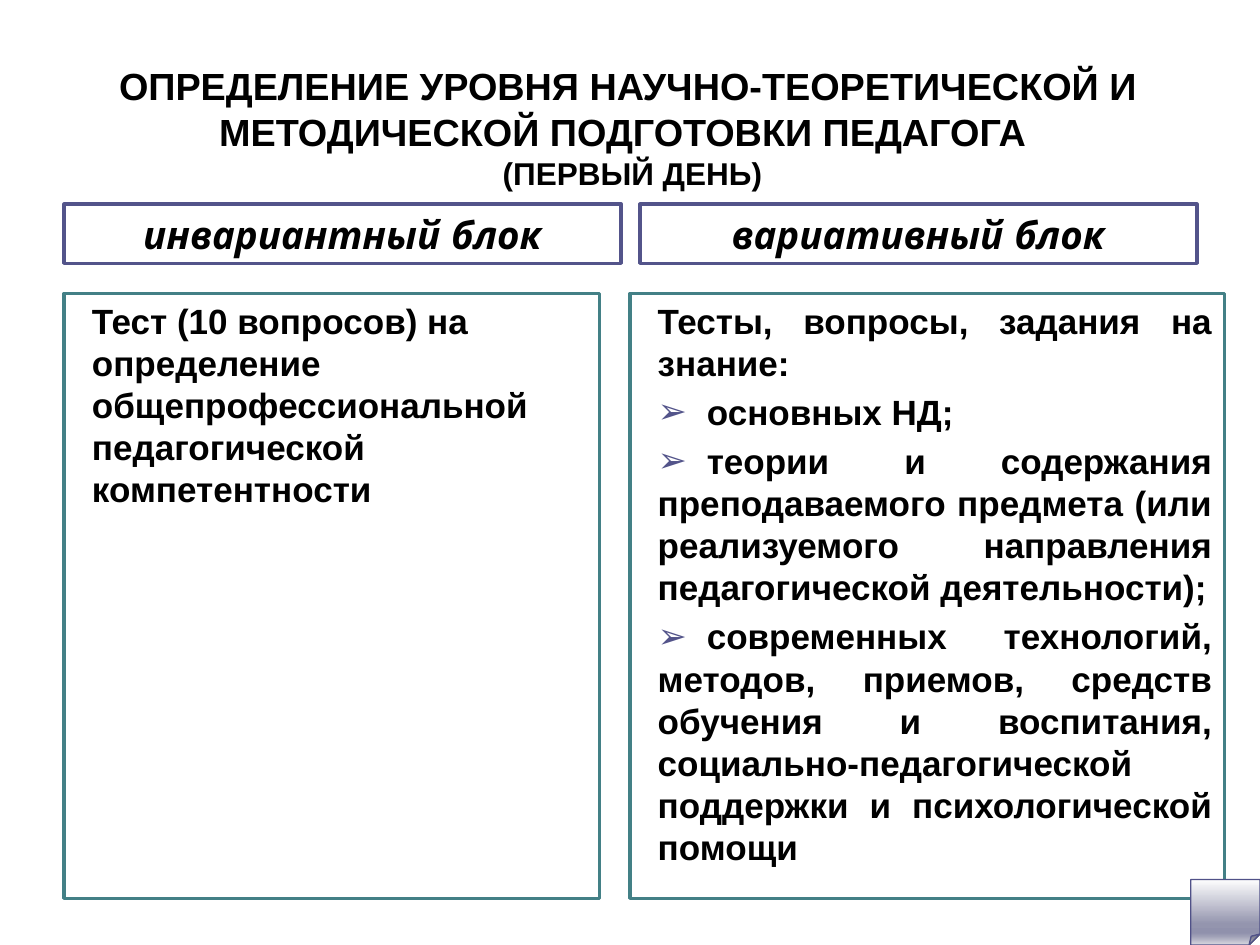
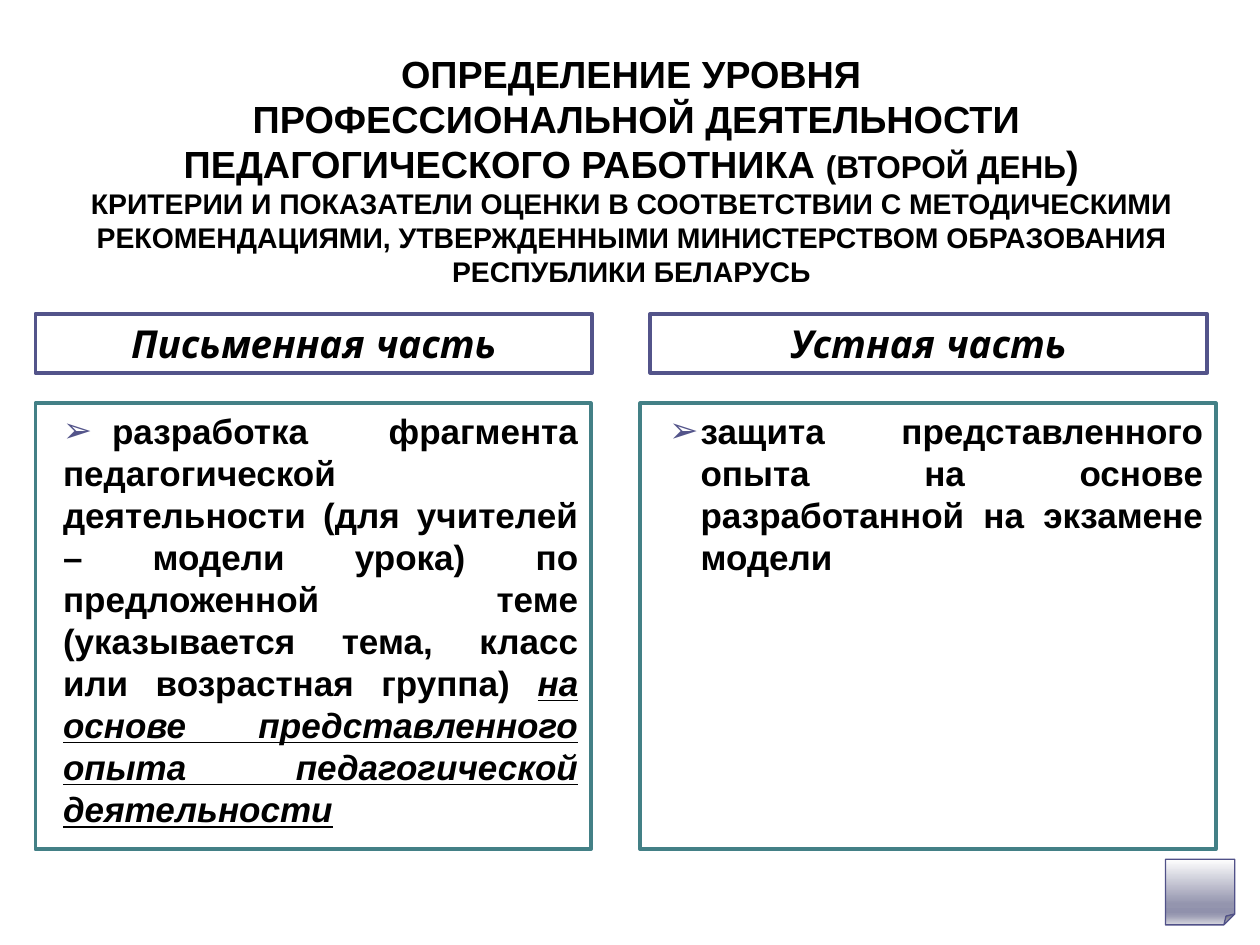
import pptx
import pptx.dml.color
import pptx.enum.shapes
import pptx.enum.text
import pptx.oxml
import pptx.oxml.ns
import pptx.util

RGBColor = pptx.dml.color.RGBColor
Align = pptx.enum.text.PP_ALIGN
Anchor = pptx.enum.text.MSO_ANCHOR

BLACK = RGBColor(0x00, 0x00, 0x00)
WHITE = RGBColor(0xFF, 0xFF, 0xFF)
INDIGO = RGBColor(0x53, 0x54, 0x8A)
TEAL = RGBColor(0x43, 0x80, 0x86)
CORNER_LINE = RGBColor(0x50, 0x51, 0x88)
CORNER_STOPS = (
    (0, RGBColor(0xFE, 0xFE, 0xFE)),
    (68, RGBColor(0x94, 0x95, 0xAE)),
    (81, RGBColor(0x90, 0x91, 0xAC)),
    (86, RGBColor(0x9C, 0x9D, 0xB4)),
    (100, RGBColor(0xD7, 0xD7, 0xDF)),
)

BODY_FONT = "Arial"
HEADING_FONT = "Quicksand"
TITLE_SIZE = 21.6
DAY_SIZE = 18
CRITERIA_SIZE = 16.2
HEADING_SIZE = 22
BODY_SIZE = 20
LINE_RATIO = 1.2

SLIDE_WIDTH = pptx.util.Inches(10)
SLIDE_HEIGHT = pptx.util.Inches(7.5)
COLUMN = SLIDE_WIDTH // 100
ROW = SLIDE_HEIGHT // 75
COMPARISON_LAYOUT = 4
HEADING_WIDTH = 44.2
HEADING_HEIGHT = 4.7
PANEL_OFFSET = 7.1
TEXT_INDENT = 1.2
BULLET_TAB = 5.1
HANGING_MARGIN = 3.8
HANGING_INDENT = -2.5


def place(shape, left, top, width, height):
    shape.left = round(left * COLUMN)
    shape.top = round(top * ROW)
    shape.width = round(width * COLUMN)
    shape.height = round(height * ROW)


def add_text(paragraph, text, size=BODY_SIZE, font=BODY_FONT, italic=False, underline=False):
    run = paragraph.add_run()
    run.text = text
    run.font.name = font
    run.font.size = pptx.util.Pt(size)
    run.font.bold = True
    run.font.italic = italic
    run.font.underline = underline
    run.font.color.rgb = BLACK


def next_paragraph(frame, size, align, space_before=0):
    first = frame.paragraphs[0]
    paragraph = frame.add_paragraph() if first.runs else first
    paragraph.alignment = align
    paragraph.line_spacing = pptx.util.Pt(round(size * LINE_RATIO, 1))
    paragraph.space_before = pptx.util.Pt(space_before)
    return paragraph


def add_property(properties, xml):
    tag, rest = xml.split(" ", 1)
    namespace = pptx.oxml.ns.nsdecls("a")
    properties.append(pptx.oxml.parse_xml(f"<{tag} {namespace} {rest}"))


def format_list_item(paragraph, bullet=False, hanging=False):
    properties = paragraph._p.get_or_add_pPr()
    margin = HANGING_MARGIN if hanging else TEXT_INDENT
    indent = HANGING_INDENT if hanging else 0
    properties.set("marL", str(round(margin * COLUMN)))
    properties.set("indent", str(round(indent * COLUMN)))
    if not bullet:
        add_property(properties, "a:buNone />")
        return
    add_property(properties, f'a:buClr ><a:srgbClr val="{INDIGO}"/></a:buClr>')
    add_property(properties, f'a:buFont typeface="{BODY_FONT}"/>')
    add_property(properties, 'a:buChar char="➢"/>')
    if not hanging:
        stop = round(BULLET_TAB * COLUMN)
        add_property(properties, f'a:tabLst ><a:tab pos="{stop}" algn="l"/></a:tabLst>')


def prepare_frame(shape, anchor):
    frame = shape.text_frame
    frame.word_wrap = True
    frame.auto_size = pptx.enum.text.MSO_AUTO_SIZE.NONE
    frame.vertical_anchor = anchor
    return frame


def add_title(slide, box, top_inset, lines):
    title = slide.shapes.title
    place(title, *box)
    frame = prepare_frame(title, Anchor.TOP)
    frame.margin_top = round(top_inset * ROW)
    for line in lines:
        paragraph = next_paragraph(frame, line[0][1], Align.CENTER)
        for text, size in line:
            add_text(paragraph, text, size=size)


def outlined_frame(shape, box, color, anchor):
    place(shape, *box)
    shape.fill.solid()
    shape.fill.fore_color.rgb = WHITE
    shape.line.color.rgb = color
    shape.line.width = pptx.util.Pt(2)
    return prepare_frame(shape, anchor)


def add_heading(shape, left, top, text):
    box = (left, top, HEADING_WIDTH, HEADING_HEIGHT)
    frame = outlined_frame(shape, box, INDIGO, Anchor.BOTTOM)
    paragraph = frame.paragraphs[0]
    paragraph.alignment = Align.CENTER
    add_text(paragraph, text, size=HEADING_SIZE, font=HEADING_FONT, italic=True)


def add_panel(shape, box, items, align=Align.JUSTIFY):
    frame = outlined_frame(shape, box, TEAL, Anchor.TOP)
    for text, options in items:
        paragraph = next_paragraph(frame, BODY_SIZE, align, space_before=BODY_SIZE / 5)
        format_list_item(paragraph, **options)
        tabbed = options.get("bullet") and not options.get("hanging")
        add_text(paragraph, "\t" + text if tabbed else text)
    return frame


def add_folded_corner(slide, left, top):
    kind = pptx.enum.shapes.MSO_SHAPE.FOLDED_CORNER
    corner = slide.shapes.add_shape(kind, 0, 0, COLUMN, ROW)
    place(corner, left, top, 5.5, 5.2)
    corner.shadow.inherit = False
    corner.line.color.rgb = CORNER_LINE
    corner.line.width = pptx.util.Pt(0.75)
    corner.fill.gradient()
    corner.fill.gradient_angle = 270
    stops = corner._element.spPr.find(".//" + pptx.oxml.ns.qn("a:gsLst"))
    for stop in list(stops):
        stops.remove(stop)
    for percent, color in CORNER_STOPS:
        add_property(stops, f'a:gs pos="{percent * 1000}"><a:srgbClr val="{color}"/></a:gs>')


def add_comparison_slide(presentation):
    slide = presentation.slides.add_slide(presentation.slide_layouts[COMPARISON_LAYOUT])
    return slide, [slide.placeholders[index] for index in (1, 2, 3, 4)]


def build_first_day(presentation):
    slide, (left_heading, left_panel, right_heading, right_panel) = add_comparison_slide(presentation)
    add_title(slide, (4.7, 2.3, 90.3, 13.5), 2.7, [
        [("ОПРЕДЕЛЕНИЕ УРОВНЯ НАУЧНО-ТЕОРЕТИЧЕСКОЙ И МЕТОДИЧЕСКОЙ ПОДГОТОВКИ ПЕДАГОГА ", TITLE_SIZE)],
        [(" (ПЕРВЫЙ ДЕНЬ)", DAY_SIZE)],
    ])
    top = 16.2
    add_heading(left_heading, 5.1, top, "инвариантный блок")
    add_heading(right_heading, 50.8, top, "вариативный блок")
    add_panel(left_panel, (5.1, top + PANEL_OFFSET, 42.5, 48), [
        ("Тест (10 вопросов) на определение общепрофессиональной педагогической компетентности", {}),
    ], align=Align.LEFT)
    add_panel(right_panel, (50, top + PANEL_OFFSET, 47.2, 48), [
        ("Тесты, вопросы, задания на знание:", {}),
        ("основных НД;", {"bullet": True}),
        ("теории и содержания преподаваемого предмета (или реализуемого направления "
         "педагогической деятельности);", {"bullet": True}),
        ("современных технологий, методов, приемов, средств обучения и воспитания, "
         "социально-педагогической поддержки и психологической помощи", {"bullet": True}),
    ])
    add_folded_corner(slide, 94.5, 69.8)


def build_second_day(presentation):
    slide, (left_heading, left_panel, right_heading, right_panel) = add_comparison_slide(presentation)
    add_title(slide, (4.2, 2.1, 91.8, 20.5), 1.9, [
        [("ОПРЕДЕЛЕНИЕ УРОВНЯ", TITLE_SIZE)],
        [(" ПРОФЕССИОНАЛЬНОЙ ДЕЯТЕЛЬНОСТИ ПЕДАГОГИЧЕСКОГО РАБОТНИКА ", TITLE_SIZE),
         ("(ВТОРОЙ ДЕНЬ", DAY_SIZE), (")", TITLE_SIZE)],
        [("КРИТЕРИИ И ПОКАЗАТЕЛИ ОЦЕНКИ В СООТВЕТСТВИИ С МЕТОДИЧЕСКИМИ РЕКОМЕНДАЦИЯМИ, "
          "УТВЕРЖДЕННЫМИ МИНИСТЕРСТВОМ ОБРАЗОВАНИЯ РЕСПУБЛИКИ БЕЛАРУСЬ", CRITERIA_SIZE)],
    ])
    top = 24.9
    add_heading(left_heading, 2.8, top, "Письменная часть")
    add_heading(right_heading, 51.6, top, "Устная часть")
    written = add_panel(left_panel, (2.8, top + PANEL_OFFSET, 44.1, 35.4), [
        ("разработка фрагмента педагогической деятельности (для учителей – модели урока) "
         "по предложенной теме (указывается тема, класс или возрастная группа) ", {"bullet": True}),
    ])
    add_text(written.paragraphs[0], "на основе представленного опыта педагогической деятельности",
             italic=True, underline=True)
    add_panel(right_panel, (50.8, top + PANEL_OFFSET, 45.7, 35.4), [
        ("защита представленного опыта на основе разработанной на экзамене модели",
         {"bullet": True, "hanging": True}),
    ])
    add_folded_corner(slide, 92.5, 68.2)


def main():
    presentation = pptx.Presentation()
    presentation.slide_width = SLIDE_WIDTH
    presentation.slide_height = SLIDE_HEIGHT
    build_first_day(presentation)
    build_second_day(presentation)
    presentation.save("out.pptx")


if __name__ == "__main__":
    main()
